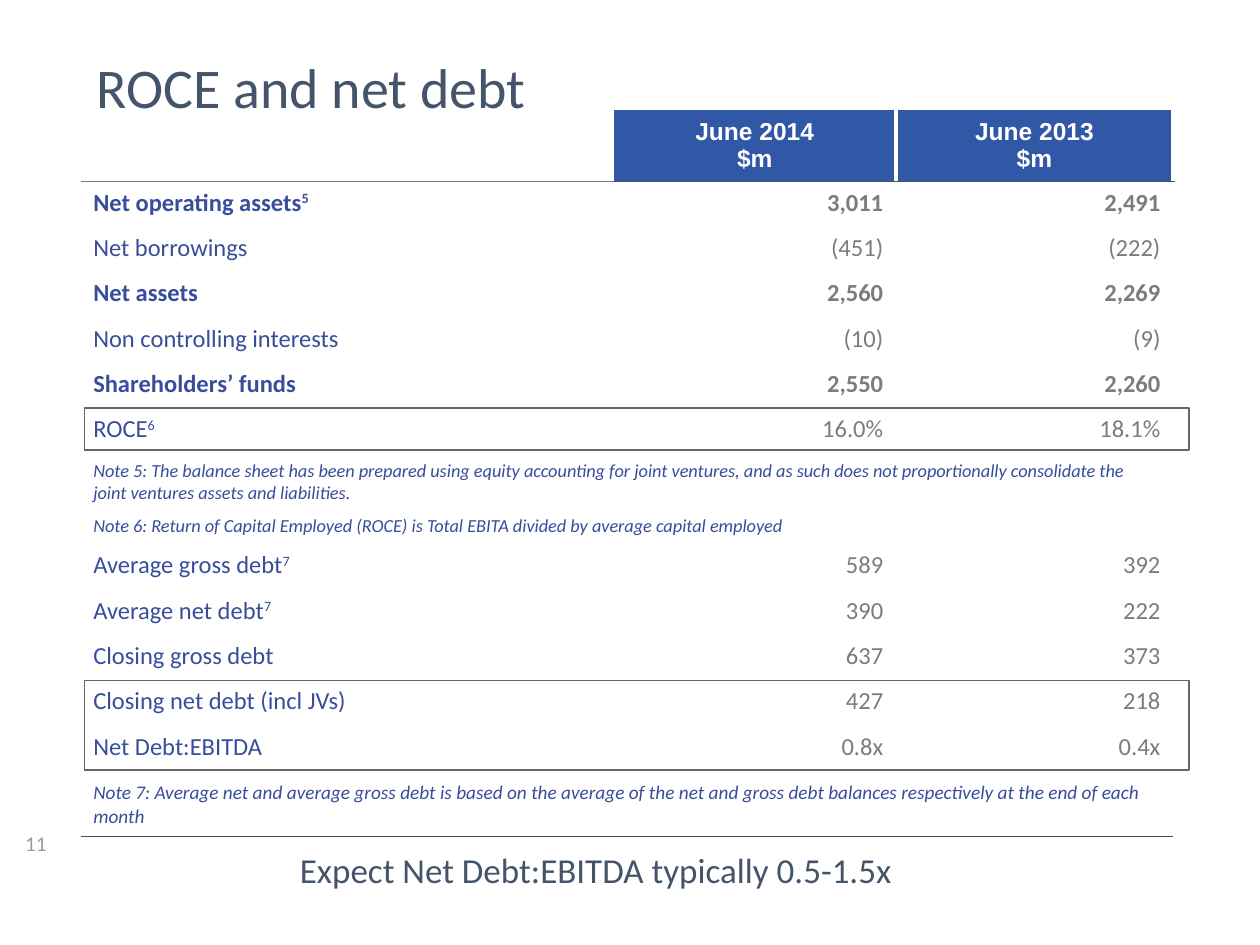
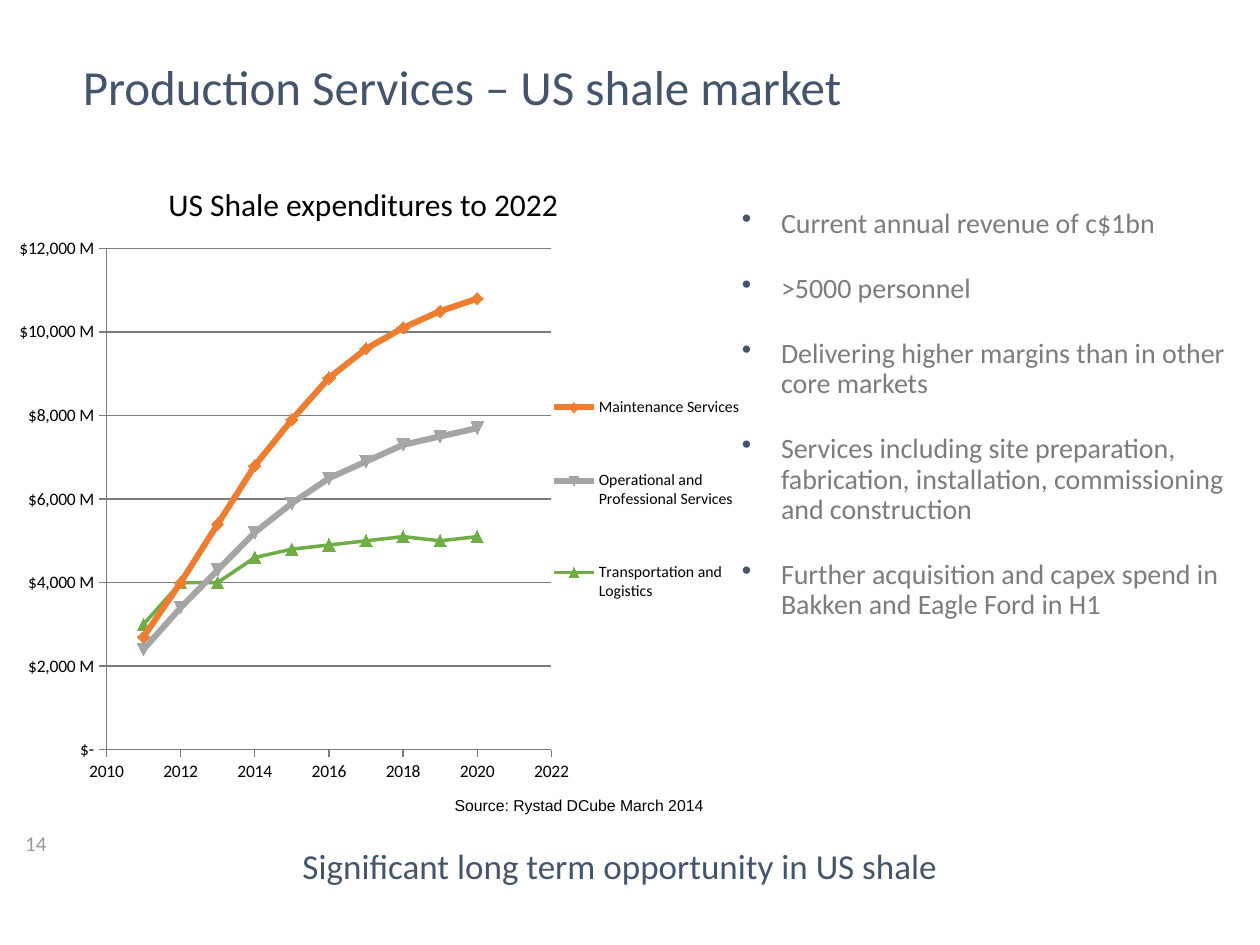
from lxml import etree
from pptx import Presentation, util as u
from pptx.chart.data import XyChartData
from pptx.dml.color import RGBColor
from pptx.enum import chart as ch, shapes, text
from pptx.oxml import parse_xml
from pptx.oxml.ns import nsdecls, qn

COLUMNS, ROWS = 100, 75
CELL = u.Inches(0.1)

SLATE, GREY, NAVY, BLUE = "44546A", "7C7C7C", "384D9B", "3157A7"
WHITE, BLACK, FRAME, PAGE_GREY = "FFFFFF", "000000", "666666", "9A9A9A"
LEFT, CENTRE, RIGHT = text.PP_ALIGN.LEFT, text.PP_ALIGN.CENTER, text.PP_ALIGN.RIGHT

BALANCE_BOX = (6.4, 8.7, 86.7, 57.7)
BALANCE_COLUMNS = (42.3, 22.4, 22)
HEADER_ROW, FIGURE_ROW, NOTES_ROW, LAST_FIGURE_ROW, LAST_NOTE_ROW = 5.7, 3.6, 7.2, 3.9, 4.9
PERIODS = ("June 2014", "June 2013")
BALANCE = [
    ("Net operating assets^5", "3,011", "2,491"),
    ("Net borrowings", "(451)", "(222)"),
    ("Net assets", "2,560", "2,269"),
    ("Non controlling interests", "(10)", "(9)"),
    ("Shareholders’ funds", "2,550", "2,260"),
    ("ROCE^6", "16.0%", "18.1%"),
]
BOLD_LABELS = {"Net operating assets^5", "Net assets", "Shareholders’ funds"}
DEBT = [
    ("Average gross debt^7", "589", "392"),
    ("Average net debt^7", "390", "222"),
    ("Closing gross debt", "637", "373"),
    ("Closing net debt (incl JVs)", "427", "218"),
    ("Net Debt:EBITDA", "0.8x", "0.4x"),
]
BALANCE_NOTES = [
    "Note 5: The balance sheet has been prepared using equity accounting for joint ventures, "
    "and as such does not proportionally consolidate the joint ventures assets and liabilities.",
    "Note 6: Return of Capital Employed (ROCE) is Total EBITA divided by average capital employed",
]
DEBT_NOTES = [
    "Note 7: Average net and average gross debt is based on the average of the net and gross "
    "debt balances respectively at the end of each month",
]

MARKET_POINTS = [
    "Current annual revenue of c$1bn",
    ">5000 personnel",
    "Delivering higher margins than in other core markets",
    "Services including site preparation, fabrication, installation, commissioning and construction",
    "Further acquisition and capex spend in Bakken and Eagle Ford in H1",
]
YEARS = range(2011, 2021)
EXPENDITURE = [
    ("Maintenance Services", "ED7D31", 3.5,
     (2700, 4000, 5400, 6800, 7900, 8900, 9600, 10100, 10500, 10800)),
    ("Operational and Professional Services", "A5A5A5", 3.5,
     (2400, 3400, 4300, 5200, 5900, 6500, 6900, 7300, 7500, 7700)),
    ("Transportation and Logistics", "70AD47", 2,
     (3000, 4000, 4000, 4600, 4800, 4900, 5000, 5100, 5000, 5100)),
]


def grid(*lengths):
    """Turn grid lengths into slide lengths."""
    return [round(length * CELL) for length in lengths]


def colour(code):
    """Turn a hex string into a colour."""
    return RGBColor.from_string(code)


def add_bullet(paragraph, code, indent):
    """Hang a coloured bullet in front of a paragraph."""
    properties = paragraph._p.get_or_add_pPr()
    properties.set("marL", str(indent))
    properties.set("indent", str(-indent))
    tint = etree.SubElement(properties, qn("a:buClr"))
    etree.SubElement(tint, qn("a:srgbClr"), val=code)
    etree.SubElement(properties, qn("a:buChar"), char="•")


def write(frame, paragraphs, size=14, font="Calibri", tint=SLATE, bold=False, italic=False,
          align=LEFT, spacing=None, before=0, after=0, bullet=None):
    """Fill a text frame; a caret starts a superscript."""
    for index, wording in enumerate(paragraphs):
        paragraph = frame.add_paragraph() if index else frame.paragraphs[0]
        if bullet:
            add_bullet(paragraph, bullet, u.Inches(0.31))
        paragraph.alignment = align
        paragraph.space_before = u.Pt(before if index else 0)
        paragraph.space_after = u.Pt(after)
        if spacing:
            paragraph.line_spacing = spacing
        for position, part in enumerate(wording.split("^")):
            run = paragraph.add_run()
            run.text = part
            run.font.size, run.font.name = u.Pt(size), font
            run.font.bold, run.font.italic = bold, italic
            run.font.color.rgb = colour(tint)
            if position:
                run.font._element.set("baseline", "30000")


def add_text(slide, box, paragraphs, wrap=True, inset=True, **look):
    """Place a text box on the grid and write in it."""
    frame = slide.shapes.add_textbox(*grid(*box)).text_frame
    frame.word_wrap = wrap
    if not inset:
        frame.margin_left = frame.margin_right = frame.margin_top = frame.margin_bottom = 0
    write(frame, paragraphs, **look)


def add_page(deck, number, title, title_box, title_size):
    """Start a slide with its page number and title."""
    slide = deck.slides.add_slide(deck.slide_layouts[6])
    add_text(slide, (2, 65.9, 2.8, 4.3), [number], wrap=False, inset=False, size=12, tint=PAGE_GREY)
    add_text(slide, title_box, [title], size=title_size, spacing=0.9)
    return slide


def add_takeaway(slide, box, wording, **look):
    """Close a slide with its centred message."""
    add_text(slide, box, [wording], size=20, align=CENTRE, **look)


def rule_cell(cell, **edges):
    """Draw cell edges, each given as colour and width."""
    properties = cell._tc.get_or_add_tcPr()
    for side in "LRTB":
        if side in edges:
            code, width = edges[side]
            properties.append(parse_xml(
                f'<a:ln{side} {nsdecls("a")} w="{u.Pt(width)}"><a:solidFill>'
                f'<a:srgbClr val="{code}"/></a:solidFill></a:ln{side}>'))


def fill_header(cells):
    """Write the period headings above the figures."""
    rule_cell(cells[0], B=(GREY, 0.5))
    cells[0].fill.background()
    for cell, period in zip(cells[1:], PERIODS):
        rule_cell(cell, R=(WHITE, 3), B=(SLATE, 1))
        cell.fill.solid()
        cell.fill.fore_color.rgb = colour(BLUE)
        cell.vertical_anchor = text.MSO_ANCHOR.MIDDLE
        write(cell.text_frame, [period, "$m"], font="Arial", tint=WHITE, bold=True, align=CENTRE)


def fill_figures(cells, entry):
    """Write one label and its two figures."""
    bold = entry[0] in BOLD_LABELS
    for index, (cell, wording) in enumerate(zip(cells, entry)):
        cell.fill.background()
        write(cell.text_frame, [wording], tint=GREY if index else NAVY, bold=bold,
              align=RIGHT if index else LEFT, after=6)


def fill_notes(cells, notes, size):
    """Write notes across the whole row."""
    cells[0].merge(cells[-1])
    cells[0].fill.background()
    write(cells[0].text_frame, notes, size=size, tint=NAVY, italic=True, after=6)


def add_frame(slide, box):
    """Outline a group of rows."""
    frame = slide.shapes.add_shape(shapes.MSO_SHAPE.RECTANGLE, *grid(*box))
    frame.shadow.inherit = False
    frame.fill.background()
    frame.line.color.rgb = colour(FRAME)
    frame.line.width = u.Pt(1)


def add_balance(slide, box):
    """Build the balance and debt table with its framed rows."""
    left, top, width, _ = box
    heights = ([HEADER_ROW] + [FIGURE_ROW] * len(BALANCE) + [NOTES_ROW]
               + [FIGURE_ROW] * (len(DEBT) - 1) + [LAST_FIGURE_ROW, LAST_NOTE_ROW])
    table = slide.shapes.add_table(len(heights), len(BALANCE_COLUMNS), *grid(*box)).table
    table.first_row = table.horz_banding = False
    table._tbl.tblPr[0].text = "{2D5ABB26-0587-4C30-8999-92F81FD0307C}"
    for column, share in zip(table.columns, grid(*BALANCE_COLUMNS)):
        column.width = share
    for row, height in zip(table.rows, grid(*heights)):
        row.height = height
    rows = [list(row.cells) for row in table.rows]

    notes_at = 1 + len(BALANCE)
    fill_header(rows[0])
    for cells, entry in zip(rows[1:notes_at] + rows[notes_at + 1:-1], BALANCE + DEBT):
        fill_figures(cells, entry)
    for cell in rows[-1]:
        rule_cell(cell, B=(SLATE, 1))
    fill_notes(rows[notes_at], BALANCE_NOTES, 10.5)
    fill_notes(rows[-1], DEBT_NOTES, 11)

    for first_row, height in ((notes_at - 1, 3.3), (len(heights) - 3, 7.1)):
        add_frame(slide, (left + 0.3, top + sum(heights[:first_row]), width + 1, height))


def set_layout(part, x, y, w, h, inner=False):
    """Fix the place of a chart part as shares of the chart."""
    for stale in part.findall(qn("c:layout")):
        part.remove(stale)
    target = '<c:layoutTarget val="inner"/>' if inner else ""
    modes = '<c:xMode val="edge"/><c:yMode val="edge"/>'
    sizes = "".join(f'<c:{name} val="{share}"/>' for name, share in zip("xywh", (x, y, w, h)))
    layout = parse_xml(f'<c:layout {nsdecls("c")}><c:manualLayout>{target}{modes}{sizes}'
                       '</c:manualLayout></c:layout>')
    part.insert(0 if inner else 1, layout)


def style_axis(axis, low, high, step, number_format, gridlines):
    """Set the scale and look of one axis."""
    axis.minimum_scale, axis.maximum_scale, axis.major_unit = low, high, step
    axis.tick_labels.number_format = number_format
    axis.tick_labels.number_format_is_linked = False
    axis.major_tick_mark = ch.XL_TICK_MARK.OUTSIDE
    axis.format.line.color.rgb = colour(GREY)
    axis.has_major_gridlines = gridlines
    if gridlines:
        axis.major_gridlines.format.line.color.rgb = colour(GREY)


def add_expenditure(slide, box):
    """Build the expenditure chart with its heading and source."""
    left, top, width, height = box
    data = XyChartData()
    for name, _, _, amounts in EXPENDITURE:
        line = data.add_series(name)
        for year, amount in zip(YEARS, amounts):
            line.add_data_point(year, amount)
    chart = slide.shapes.add_chart(ch.XL_CHART_TYPE.XY_SCATTER_LINES, *grid(*box), data).chart
    chart.has_title = False
    chart.font.size, chart.font.name = u.Pt(10), "Calibri"
    chart.font.color.rgb = colour(BLACK)
    chart.plots[0].vary_by_categories = False
    style_axis(chart.category_axis, 2010, 2022, 2, "0", False)
    style_axis(chart.value_axis, 0, 12000, 2000, '"$"#,##0" M";"$"#,##0" M";"$-"', True)

    for index, (line, (_, tint, weight, _)) in enumerate(zip(chart.plots[0].series, EXPENDITURE), 1):
        line._element.find(qn("c:idx")).set("val", str(index))
        line.smooth = False
        line.format.line.color.rgb = colour(tint)
        line.format.line.width = u.Pt(weight)
        line.marker.size = 7
        line.marker.format.fill.solid()
        line.marker.format.fill.fore_color.rgb = colour(tint)
        line.marker.format.line.color.rgb = colour(tint)

    chart.has_legend = True
    chart.legend.position = ch.XL_LEGEND_POSITION.RIGHT
    chart.legend.include_in_layout = False
    chart.legend.font.size = u.Pt(9)
    set_layout(chart._chartSpace.chart.plotArea, 0.12, 0.03, 0.61, 0.9, inner=True)
    set_layout(chart.legend._element, 0.74, 0.2, 0.26, 0.56)

    add_text(slide, (left + 10.8, top - 4.2, 33, 4), ["US Shale expenditures to 2022"],
             wrap=False, size=18, tint=BLACK, align=RIGHT)
    add_text(slide, (left + 33.6, top + height + 0.1, 21.9, 5.6),
             ["Source: Rystad DCube March 2014"], wrap=False, size=9, font="Arial", tint=BLACK)


def main():
    """Build both slides and save the deck."""
    deck = Presentation()
    deck.slide_width, deck.slide_height = grid(COLUMNS, ROWS)

    debt = add_page(deck, "11", "ROCE and net debt", (6.7, 4.3, 85, 6.5), 32)
    add_balance(debt, BALANCE_BOX)
    add_takeaway(debt, (10.3, 67.5, 74, 5.2), "Expect Net Debt:EBITDA typically 0.5-1.5x", spacing=0.8)

    shale = add_page(deck, "14", "Production Services – US shale market", (5.6, 4.5, 89.5, 6.5), 28)
    add_expenditure(shale, (1.5, 18.4, 57.9, 44.2))
    add_text(shale, (57.9, 16.1, 42.1, 46.3), MARKET_POINTS, size=16, tint=GREY, spacing=0.9,
             before=12, after=8, bullet=SLATE)
    add_takeaway(shale, (9.8, 67.4, 78.8, 4.5), "Significant long term opportunity in US shale",
                 inset=False, spacing=0.9)
    deck.save("out.pptx")


if __name__ == "__main__":
    main()
